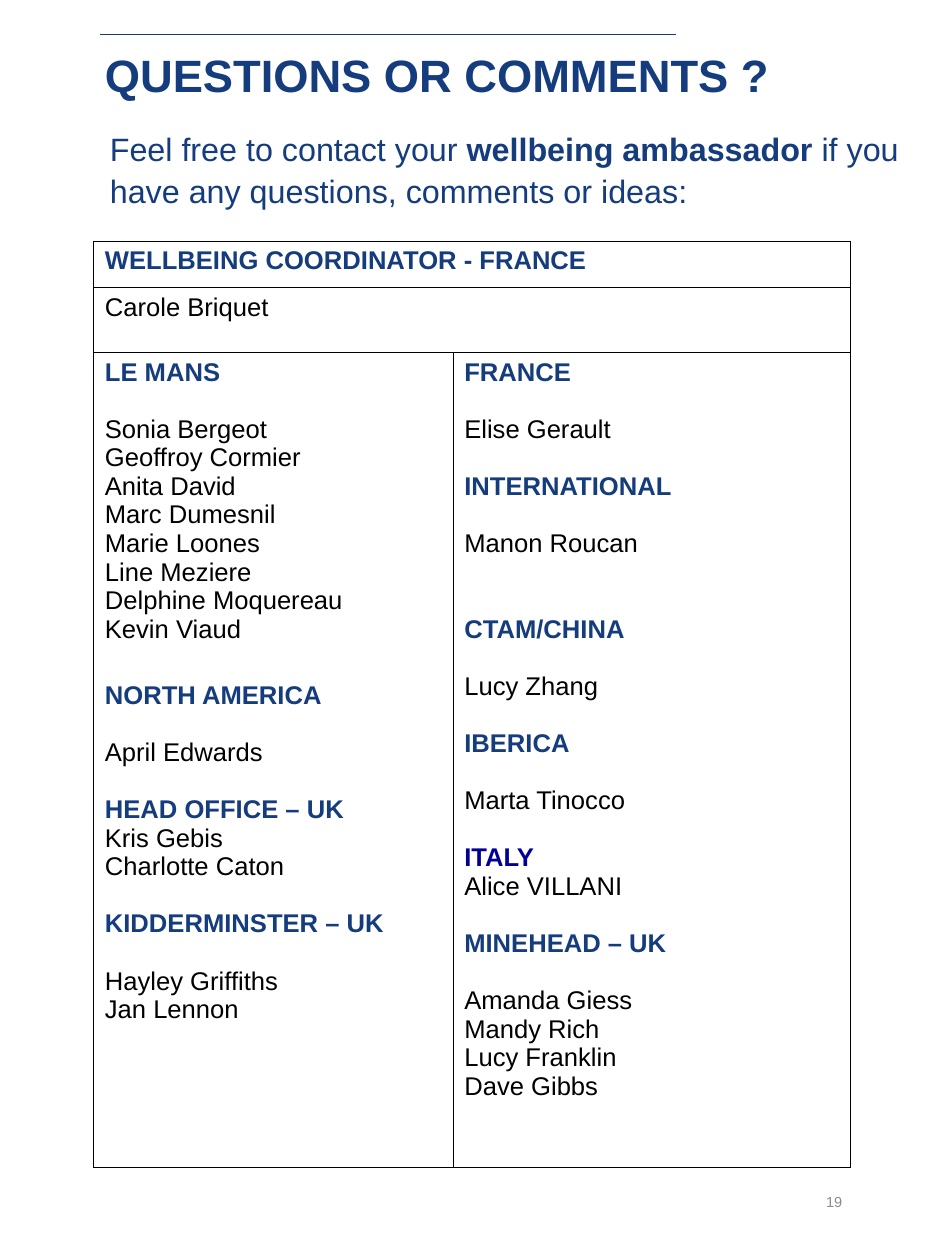
from dataclasses import dataclass

from lxml.etree import SubElement
from pptx import Presentation
from pptx.dml.color import RGBColor
from pptx.enum.shapes import MSO_CONNECTOR as Connector
from pptx.enum.text import MSO_ANCHOR as Anchor, MSO_AUTO_SIZE as AutoSize, PP_ALIGN as Align
from pptx.oxml.ns import qn
from pptx.util import Emu, Pt

EMU_PER_PX = 9144
NAVY, BLACK, GREY, ITALY_BLUE = "153C7D", "000000", "8C8C8C", "000099"
CELL_SIZE = 26
BLANK_LINE = 29


@dataclass(frozen=True)
class Span:
    """A run of text and its weight."""
    text: str
    bold: bool = False


@dataclass(frozen=True)
class TextBox:
    """A one-paragraph text box, in px, with its font size in points."""
    left: int
    top: int
    width: int
    height: int
    spans: tuple[Span, ...]
    size: float
    color: str = NAVY
    side_inset: int = 7
    line_spacing: float = 1.08
    align: Align = Align.LEFT
    anchor: Anchor = Anchor.TOP
    grows: bool = True


@dataclass(frozen=True)
class Team:
    """A site heading with its ambassadors, and the gaps around the heading in points."""
    heading: str
    names: tuple[str, ...]
    gap_above: int = BLANK_LINE
    gap_below: int = BLANK_LINE
    color: str = NAVY


TEXT_BOXES = (
    TextBox(141, 55, 992, 87, (Span("QUESTIONS OR COMMENTS ?", True),), 46),
    TextBox(148, 173, 1154, 121, (
        Span("Feel free to contact your "),
        Span("wellbeing ambassador ", True),
        Span("if you have any questions, comments or ideas:"),
    ), 32.8),
    TextBox(921, 1648, 277, 95, (Span("19"),), 14.8, GREY, side_inset=10, line_spacing=1,
            align=Align.RIGHT, anchor=Anchor.MIDDLE, grows=False),
)
COLUMN_WIDTHS = (507, 561)
ROW_HEIGHTS = (66, 91, 1151)
LEFT_TEAMS = (
    Team("LE MANS", ("Sonia Bergeot", "Geoffroy Cormier", "Anita David", "Marc Dumesnil",
                     "Marie Loones", "Line Meziere", "Delphine Moquereau", "Kevin Viaud")),
    Team("NORTH AMERICA", ("April Edwards",), gap_above=BLANK_LINE + 9),
    Team("HEAD OFFICE – UK", ("Kris Gebis", "Charlotte Caton"), gap_below=0),
    Team("KIDDERMINSTER – UK", ("Hayley Griffiths", "Jan Lennon")),
)
RIGHT_TEAMS = (
    Team("FRANCE", ("Elise Gerault",)),
    Team("INTERNATIONAL", ("Manon Roucan",)),
    Team("CTAM/CHINA", ("Lucy Zhang",), gap_above=2 * BLANK_LINE),
    Team("IBERICA", ("Marta Tinocco",)),
    Team("ITALY", ("Alice VILLANI",), gap_below=0, color=ITALY_BLUE),
    Team("MINEHEAD – UK", ("Amanda Giess", "Mandy Rich", "Lucy Franklin", "Dave Gibbs")),
)


def px(length: int) -> Emu:
    """Turn px into EMU."""
    return Emu(length * EMU_PER_PX)


def rgb(color: str) -> RGBColor:
    """Turn a hex string into a colour."""
    return RGBColor.from_string(color)


def add_span(para, span: Span, size: float, color: str) -> None:
    """Add one run to a paragraph."""
    run = para.add_run()
    run.text = span.text
    run.font.name = "Arial"
    run.font.size = Pt(size)
    run.font.bold = span.bold
    run.font.color.rgb = rgb(color)


def draw_text_box(page, item: TextBox) -> None:
    """Draw a text box with its runs."""
    box = page.shapes.add_textbox(px(item.left), px(item.top), px(item.width), px(item.height))
    frame = box.text_frame
    frame.word_wrap = True
    frame.auto_size = AutoSize.SHAPE_TO_FIT_TEXT if item.grows else AutoSize.NONE
    frame.vertical_anchor = item.anchor
    frame.margin_left = frame.margin_right = px(item.side_inset)
    frame.margin_top = frame.margin_bottom = px(5)
    para = frame.paragraphs[0]
    para.alignment = item.align
    para.line_spacing = item.line_spacing
    for span in item.spans:
        add_span(para, span, item.size, item.color)


def draw_rule(page) -> None:
    """Draw the thin rule above the title."""
    rule = page.shapes.add_connector(Connector.STRAIGHT, px(141), px(48), px(953), px(48))
    rule.line.color.rgb = rgb(NAVY)
    rule.line.width = Pt(0.5)
    SubElement(rule._element.spPr, qn("a:effectLst"))


def style_cell(cell) -> None:
    """Give a cell its insets, black borders and no fill."""
    cell.margin_left = cell.margin_right = px(16)
    cell.margin_top = cell.margin_bottom = px(8)
    properties = cell._tc.get_or_add_tcPr()
    for side in ("a:lnL", "a:lnR", "a:lnT", "a:lnB"):
        border = SubElement(properties, qn(side), w=str(Pt(1)))
        SubElement(SubElement(border, qn("a:solidFill")), qn("a:srgbClr"), val=BLACK)
    cell.fill.background()


def add_cell_line(cell, span: Span, color: str, gap: int = 0) -> None:
    """Add a line to a cell, below a gap unless it is the first."""
    para = cell.text_frame.paragraphs[0]
    if para.runs:
        para = cell.text_frame.add_paragraph()
        para.space_before = Pt(gap)
    add_span(para, span, CELL_SIZE, color)


def fill_teams(cell, teams: tuple[Team, ...]) -> None:
    """List the teams in a cell."""
    for team in teams:
        add_cell_line(cell, Span(team.heading, True), team.color, team.gap_above)
        for index, name in enumerate(team.names):
            add_cell_line(cell, Span(name), BLACK, 0 if index else team.gap_below)


def draw_contacts(page) -> None:
    """Draw the table of ambassadors."""
    frame = page.shapes.add_table(len(ROW_HEIGHTS), len(COLUMN_WIDTHS), px(132), px(340),
                                  px(sum(COLUMN_WIDTHS)), px(sum(ROW_HEIGHTS)))
    table = frame.table
    table.first_row = table.horz_banding = False
    for column, width in zip(table.columns, COLUMN_WIDTHS):
        column.width = px(width)
    for row, height in zip(table.rows, ROW_HEIGHTS):
        row.height = px(height)
    for cell in table.iter_cells():
        style_cell(cell)
    for row in range(2):
        table.cell(row, 0).merge(table.cell(row, 1))
    add_cell_line(table.cell(0, 0), Span("WELLBEING COORDINATOR - FRANCE", True), NAVY)
    add_cell_line(table.cell(1, 0), Span("Carole Briquet"), BLACK)
    for column, teams in enumerate((LEFT_TEAMS, RIGHT_TEAMS)):
        fill_teams(table.cell(2, column), teams)


def main() -> None:
    """Build the slide and save the deck."""
    deck = Presentation()
    deck.slide_width, deck.slide_height = px(1333), px(1778)
    page = deck.slides.add_slide(deck.slide_layouts[6])
    draw_rule(page)
    for item in TEXT_BOXES:
        draw_text_box(page, item)
    draw_contacts(page)
    deck.save("out.pptx")


if __name__ == "__main__":
    main()
